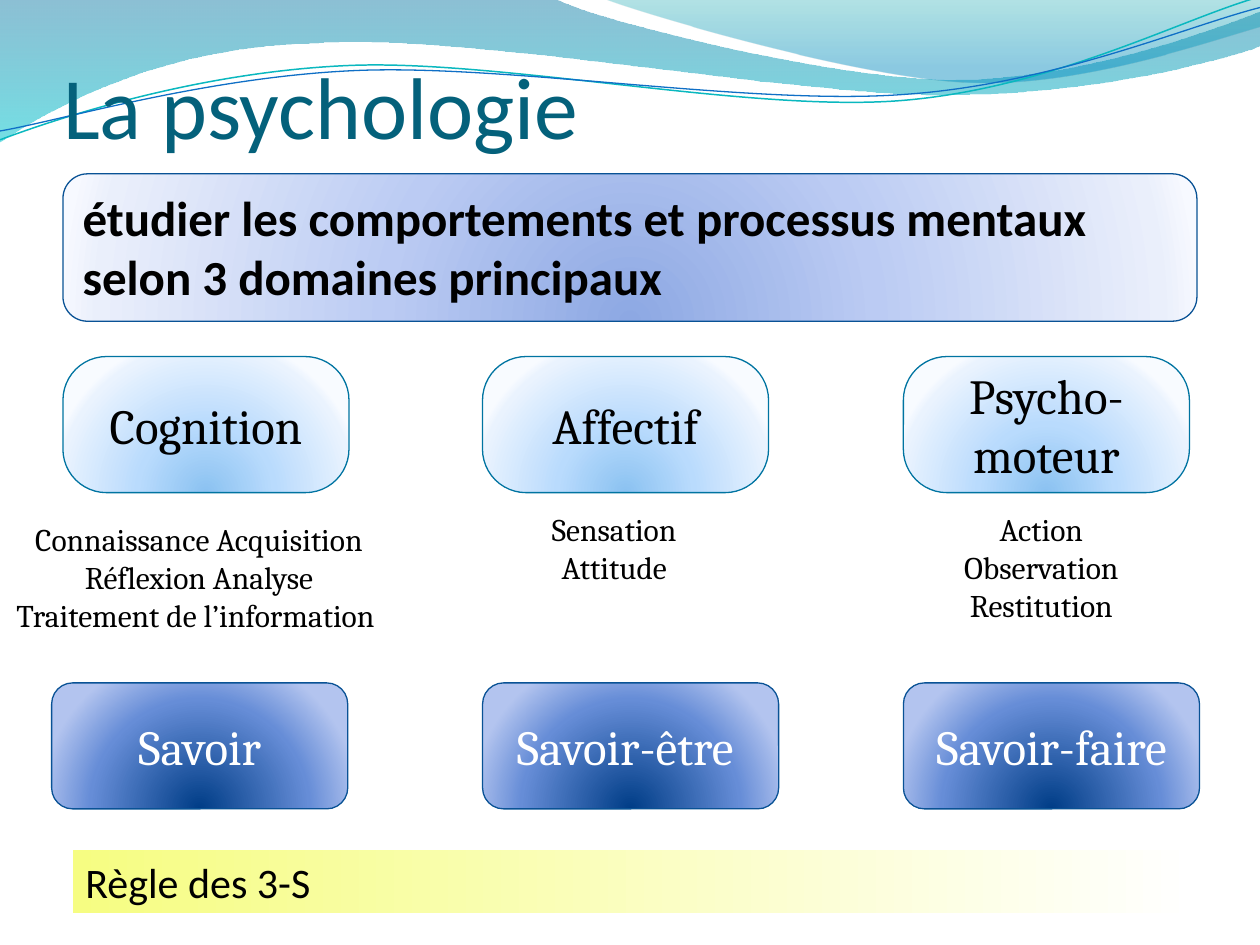
from math import cos, radians, sin

from pptx import Presentation
from pptx.dml.color import RGBColor
from pptx.enum.shapes import MSO_SHAPE
from pptx.enum.text import MSO_ANCHOR, MSO_AUTO_SIZE, PP_ALIGN
from pptx.oxml import parse_xml
from pptx.oxml.ns import nsdecls, qn
from pptx.util import Inches, Pt

ROUND, RECT = MSO_SHAPE.ROUNDED_RECTANGLE, MSO_SHAPE.RECTANGLE
TOP, MIDDLE, BOTTOM = MSO_ANCHOR.TOP, MSO_ANCHOR.MIDDLE, MSO_ANCHOR.BOTTOM
LEFT, CENTER = PP_ALIGN.LEFT, PP_ALIGN.CENTER
FIXED, GROW = MSO_AUTO_SIZE.NONE, MSO_AUTO_SIZE.SHAPE_TO_FIT_TEXT

COLORS = {
    "title": "04617B", "black": "000000", "white": "FFFFFF",
    "sky": "0074A1", "navy": "095295", "teal": "0AB8BF", "blue": "0F6FC6",
}
GLOW = '<a:path path="circle"><a:fillToRect l="50000" t="130000" r="50000" b="-30000"/></a:path>'
DOWN = '<a:lin ang="5400000" scaled="0"/>'
ACROSS = '<a:lin ang="0" scaled="0"/>'
FILLS = {
    "wave": ([(0, "0074A1", 45), (100, "00C6CF", 55)], DOWN),
    "crest": ([(0, "00A1A9", 30), (80, "008BBF", 45)], DOWN),
    "banner": ([(0, "8DA8E3", 100), (43, "BBCBF3", 100), (93, "EAEFFB", 100), (100, "F7F9FF", 100)], GLOW),
    "domain": ([(0, "8BC2F1", 100), (43, "B9DBFD", 100), (93, "EAF3FE", 100), (100, "F8FBFF", 100)], GLOW),
    "skill": ([(0, "003D87", 100), (68, "668DD7", 100), (100, "B3C4EF", 100)], GLOW),
    "rule": ([(0, "F6FD82", 100), (100, "FFFFFF", 100)], ACROSS),
}
WAVES = [
    ("wave", [(0, 0), (4.4, -0.01), (4.76, 0.17, 6.64, 0.63, 7.58, 0.63),
              (8.53, 0.63, 9.58, 0.26, 10, 0.09), (10.01, 0.36),
              (9.83, 0.44, 8.7, 0.76, 7.46, 0.75), (6.22, 0.75, 3.82, 0.28, 2.57, 0.34),
              (1.29, 0.36, 0.46, 0.83, -0.01, 1.13)]),
    ("crest", [(4.79, -0.01), (5.09, 0.11, 6.82, 0.62, 7.69, 0.65),
               (8.56, 0.69, 9.61, 0.32, 10, 0.21), (10, 0)]),
]
TILT = 357.3
CURVES = [
    ("teal", 0.85, (4.99, 0.57), [
        (0, 1.11), (0.48, 0.93, 1.58, 0.57, 2.77, 0.52),
        (3.95, 0.47, 5.93, 0.89, 7.13, 0.8), (8.33, 0.71, 9.38, 0.15, 9.98, -0.02)]),
    ("blue", 0.75, (5, 0.59), [
        (0, 1.04), (0.47, 0.96, 1.64, 0.61, 2.83, 0.56),
        (4.03, 0.51, 5.97, 0.84, 7.17, 0.75), (8.36, 0.67, 9.41, 0.21, 10, 0.06)]),
]
TITLE = "La psychologie"
BANNER = "étudier les comportements et processus mentaux selon 3 domaines principaux"
RULE = "Règle des 3-S"
DOMAINS = [
    {"name": "Cognition", "skill": "Savoir", "left": 0.5, "edge": 0.41,
     "notes": ["Connaissance Acquisition", "Réflexion Analyse", "Traitement de l’information "],
     "box": (-0.17, 4.08, 3.5, 1.01)},
    {"name": "Affectif", "skill": "Savoir-être ", "left": 3.83, "edge": 3.83,
     "notes": ["Sensation", "Attitude"], "box": (3.5, 4, 2.75, 0.71)},
    {"name": "Psycho-moteur", "skill": "Savoir-faire", "left": 7.17, "edge": 7.17,
     "notes": ["Action", "Observation", "Restitution"], "box": (7.1, 4, 2.33, 1.01)},
]


def rgb(name):
    return RGBColor.from_string(COLORS[name])


def shade(shape, name):
    stops, tail = FILLS[name]
    marks = "".join(
        f'<a:gs pos="{pos * 1000}"><a:srgbClr val="{tint}"><a:alpha val="{alpha * 1000}"/></a:srgbClr></a:gs>'
        for pos, tint, alpha in stops)
    shape.fill.gradient()
    old = shape._element.spPr.find(qn("a:gradFill"))
    new = parse_xml(f'<a:gradFill {nsdecls("a")} rotWithShape="1"><a:gsLst>{marks}</a:gsLst>{tail}</a:gradFill>')
    old.getparent().replace(old, new)


def border(shape, name, width=0.75):
    shape.line.color.rgb = rgb(name)
    shape.line.width = Pt(width)


def pairs(step):
    return list(zip(step[::2], step[1::2]))


def level(step, mid):
    turn = radians(360 - TILT)
    flat = []
    for x, y in pairs(step):
        across, down = x - mid[0], y - mid[1]
        flat += [mid[0] + across * cos(turn) - down * sin(turn),
                 mid[1] + across * sin(turn) + down * cos(turn)]
    return flat


def draw(slide, steps, close):
    ends = [tuple(map(Inches, step[-2:])) for step in steps]
    pen = slide.shapes.build_freeform(*ends[0])
    pen.add_line_segments(ends[1:], close=close)
    shape = pen.convert_to_shape()
    shape.shadow.inherit = False
    lines = list(shape._element.spPr.iter(qn("a:lnTo")))
    for line, step in zip(lines, steps[1:]):
        if len(step) == 6:
            knots = "".join(
                f'<a:pt x="{Inches(x) - shape.left}" y="{Inches(y) - shape.top}"/>' for x, y in pairs(step))
            bend = parse_xml(f'<a:cubicBezTo {nsdecls("a")}>{knots}</a:cubicBezTo>')
            line.getparent().replace(line, bend)
    return shape


def write(shape, lines, size, face, color, align=CENTER, anchor=MIDDLE, bold=False, fit=FIXED):
    frame = shape.text_frame
    frame.text = "\n".join(lines)
    frame.word_wrap = True
    frame.auto_size = fit
    frame.vertical_anchor = anchor
    for para in frame.paragraphs:
        para.alignment = align
        font = para.font
        font.size, font.name, font.bold = Pt(size), face, bold
        font.color.rgb = rgb(color)


def panel(slide, kind, box, fill, line=None, bend=None):
    shape = slide.shapes.add_shape(kind, *map(Inches, box))
    shape.shadow.inherit = False
    shade(shape, fill)
    if line:
        border(shape, line)
    else:
        shape.line.fill.background()
    if bend:
        shape.adjustments[0] = bend
    return shape


def main():
    """Build the slide on the three domains of psychology."""
    deck = Presentation()
    deck.slide_width, deck.slide_height = Inches(10), Inches(7.5)
    slide = deck.slides.add_slide(deck.slide_layouts[5])
    for fill, steps in WAVES:
        shape = draw(slide, steps, True)
        shade(shape, fill)
        shape.line.fill.background()
    for color, width, mid, steps in CURVES:
        shape = draw(slide, [level(step, mid) for step in steps], False)
        shape.rotation = TILT
        shape.fill.background()
        border(shape, color, width)

    title = slide.shapes.title
    title.left, title.top, title.width, title.height = map(Inches, (0.5, 0, 9, 1.25))
    write(title, [TITLE], 50, "Calibri", "title", LEFT, BOTTOM)
    frame = title.text_frame
    frame.margin_left = frame.margin_right = frame.margin_bottom = 0
    slide.shapes._spTree.append(title._element)

    banner = panel(slide, ROUND, (0.5, 1.38, 9, 1.17), "banner", "navy")
    write(banner, [BANNER], 28, "Calibri", "black", LEFT, TOP, True)
    for item in DOMAINS:
        head = panel(slide, ROUND, (item["left"], 2.83, 2.27, 1.08), "domain", "sky", 0.32)
        write(head, [item["name"]], 28, "Cambria", "black")
        notes = slide.shapes.add_textbox(*map(Inches, item["box"]))
        write(notes, item["notes"], 18, "Cambria", "black", anchor=TOP, fit=GROW)
        skill = panel(slide, ROUND, (item["edge"], 5.42, 2.35, 1), "skill", "navy")
        write(skill, [item["skill"]], 28, "Cambria", "white")
    rule = panel(slide, RECT, (0.58, 6.75, 8.92, 0.5), "rule")
    write(rule, [RULE], 24, "Calibri", "black", LEFT, TOP, fit=GROW)
    deck.save("out.pptx")


if __name__ == "__main__":
    main()
